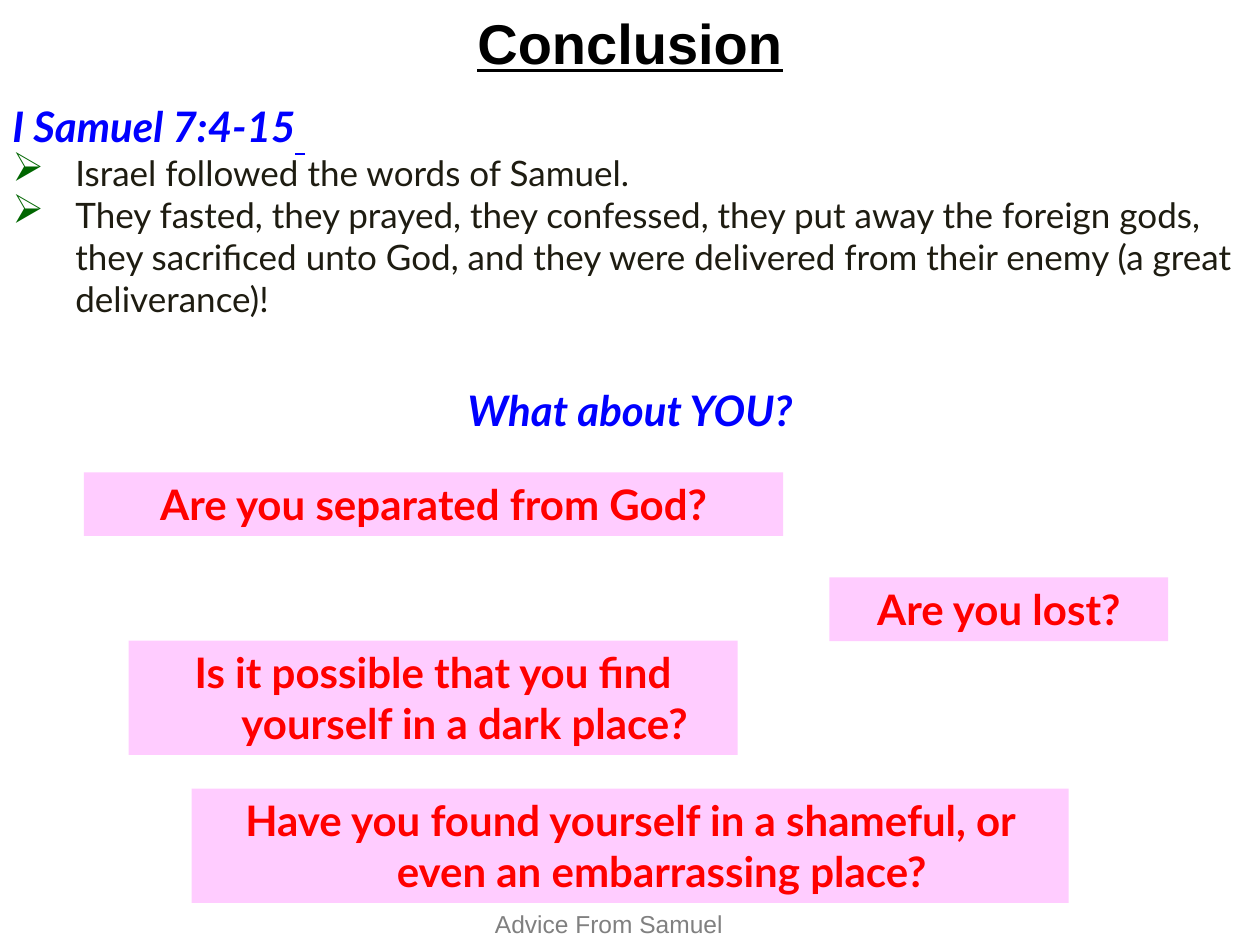
from dataclasses import dataclass

from lxml.etree import SubElement
from pptx import Presentation
from pptx.dml.color import RGBColor
from pptx.enum.shapes import MSO_SHAPE
from pptx.enum.text import MSO_ANCHOR, PP_ALIGN
from pptx.oxml.ns import qn
from pptx.slide import Slide
from pptx.text.text import TextFrame, _Paragraph
from pptx.util import Pt


@dataclass(frozen=True)
class Theme:
    heading_font: str = "Arial"
    body_font: str = "Lato"
    title_color: str = "000000"
    footer_color: str = "808080"
    accent_color: str = "0000FF"
    body_color: str = "1E1C11"
    bullet_color: str = "006600"
    question_color: str = "FF0000"
    question_fill: str = "FFCCFF"
    title_size: float = 32
    emphasis_size: float = 24
    body_size: float = 20
    footer_size: float = 14
    indent: float = 36


@dataclass(frozen=True)
class Box:
    left: float
    top: float
    width: float
    height: float

    def lengths(self) -> tuple[Pt, Pt, Pt, Pt]:
        return Pt(self.left), Pt(self.top), Pt(self.width), Pt(self.height)


@dataclass(frozen=True)
class Question:
    text: str
    box: Box


THEME = Theme()

POINTS = (
    "Israel followed the words of Samuel.",
    "They fasted, they prayed, they confessed, they put away the foreign gods, "
    "they sacrificed unto God, and they were delivered from their enemy "
    "(a great deliverance)!",
)

QUESTIONS = (
    Question("Are you separated from God?", Box(48, 270, 399.6, 36.35)),
    Question("Are you lost?", Box(474, 330, 193.5, 36.35)),
    Question("Is it possible that you find yourself in a dark place?",
             Box(73.5, 366, 348, 65.4)),
    Question("Have you found yourself in a shameful, or even an embarrassing place?",
             Box(109.5, 450.6, 501.2, 65.4)),
)


def add_bullet(paragraph: _Paragraph) -> None:
    properties = paragraph._p.get_or_add_pPr()
    color = SubElement(properties, qn("a:buClr"))
    SubElement(color, qn("a:srgbClr"), val=THEME.bullet_color)
    SubElement(properties, qn("a:buSzPct"), val="115000")
    SubElement(properties, qn("a:buChar"), char="➢")


def add_paragraph(frame: TextFrame, *, align: PP_ALIGN = PP_ALIGN.LEFT,
                  hanging: bool = False, bullet: bool = False) -> _Paragraph:
    first = frame.paragraphs[0]
    paragraph = frame.add_paragraph() if first.runs else first
    paragraph.alignment = align
    if hanging:
        properties = paragraph._p.get_or_add_pPr()
        properties.set("marL", str(Pt(THEME.indent)))
        properties.set("indent", str(-Pt(THEME.indent)))
    if bullet:
        add_bullet(paragraph)
    return paragraph


def write(paragraph: _Paragraph, text: str, *, size: float, color: str,
          font: str = THEME.body_font, bold: bool = False,
          italic: bool = False, underline: bool = False) -> None:
    run = paragraph.add_run()
    run.text = text
    run.font.name = font
    run.font.size = Pt(size)
    run.font.bold = bold
    run.font.italic = italic
    run.font.underline = underline
    run.font.color.rgb = RGBColor.from_string(color)


def add_text_box(slide: Slide, box: Box) -> TextFrame:
    frame = slide.shapes.add_textbox(*box.lengths()).text_frame
    frame.word_wrap = True
    return frame


def add_title(slide: Slide) -> None:
    title = slide.shapes.title
    title.left, title.top, title.width, title.height = Box(0, 0, 720, 48).lengths()
    title.text_frame.vertical_anchor = MSO_ANCHOR.MIDDLE
    write(add_paragraph(title.text_frame, align=PP_ALIGN.CENTER), "Conclusion",
          font=THEME.heading_font, size=THEME.title_size,
          color=THEME.title_color, bold=True, underline=True)


def add_footer(slide: Slide) -> None:
    frame = add_text_box(slide, Box(186, 516, 324, 24))
    write(add_paragraph(frame, align=PP_ALIGN.CENTER), "Advice From Samuel",
          font=THEME.heading_font, size=THEME.footer_size,
          color=THEME.footer_color)


def add_passage(slide: Slide) -> None:
    frame = add_text_box(slide, Box(0, 54, 720, 133.2))
    reference = add_paragraph(frame, hanging=True)
    for text, underline in (("I Samuel 7:4-15", False), (" ", True)):
        write(reference, text, size=THEME.emphasis_size, color=THEME.accent_color,
              bold=True, italic=True, underline=underline)
    for point in POINTS:
        write(add_paragraph(frame, hanging=True, bullet=True), point,
              size=THEME.body_size, color=THEME.body_color)


def add_challenge(slide: Slide) -> None:
    frame = add_text_box(slide, Box(0, 216, 720, 36.35))
    write(add_paragraph(frame, align=PP_ALIGN.CENTER, hanging=True),
          "What about YOU?", size=THEME.emphasis_size,
          color=THEME.accent_color, bold=True, italic=True)


def add_question(slide: Slide, question: Question) -> None:
    shape = slide.shapes.add_shape(MSO_SHAPE.RECTANGLE, *question.box.lengths())
    shape.shadow.inherit = False
    shape.fill.solid()
    shape.fill.fore_color.rgb = RGBColor.from_string(THEME.question_fill)
    shape.line.fill.background()
    frame = shape.text_frame
    frame.word_wrap = True
    frame.vertical_anchor = MSO_ANCHOR.TOP
    write(add_paragraph(frame, align=PP_ALIGN.CENTER, hanging=True),
          question.text, size=THEME.emphasis_size,
          color=THEME.question_color, bold=True)


def main() -> None:
    presentation = Presentation()
    presentation.slide_width = Pt(720)
    presentation.slide_height = Pt(540)
    slide = presentation.slides.add_slide(presentation.slide_layouts[5])
    add_title(slide)
    add_footer(slide)
    add_passage(slide)
    add_challenge(slide)
    for question in QUESTIONS:
        add_question(slide, question)
    presentation.save("out.pptx")


if __name__ == "__main__":
    main()
